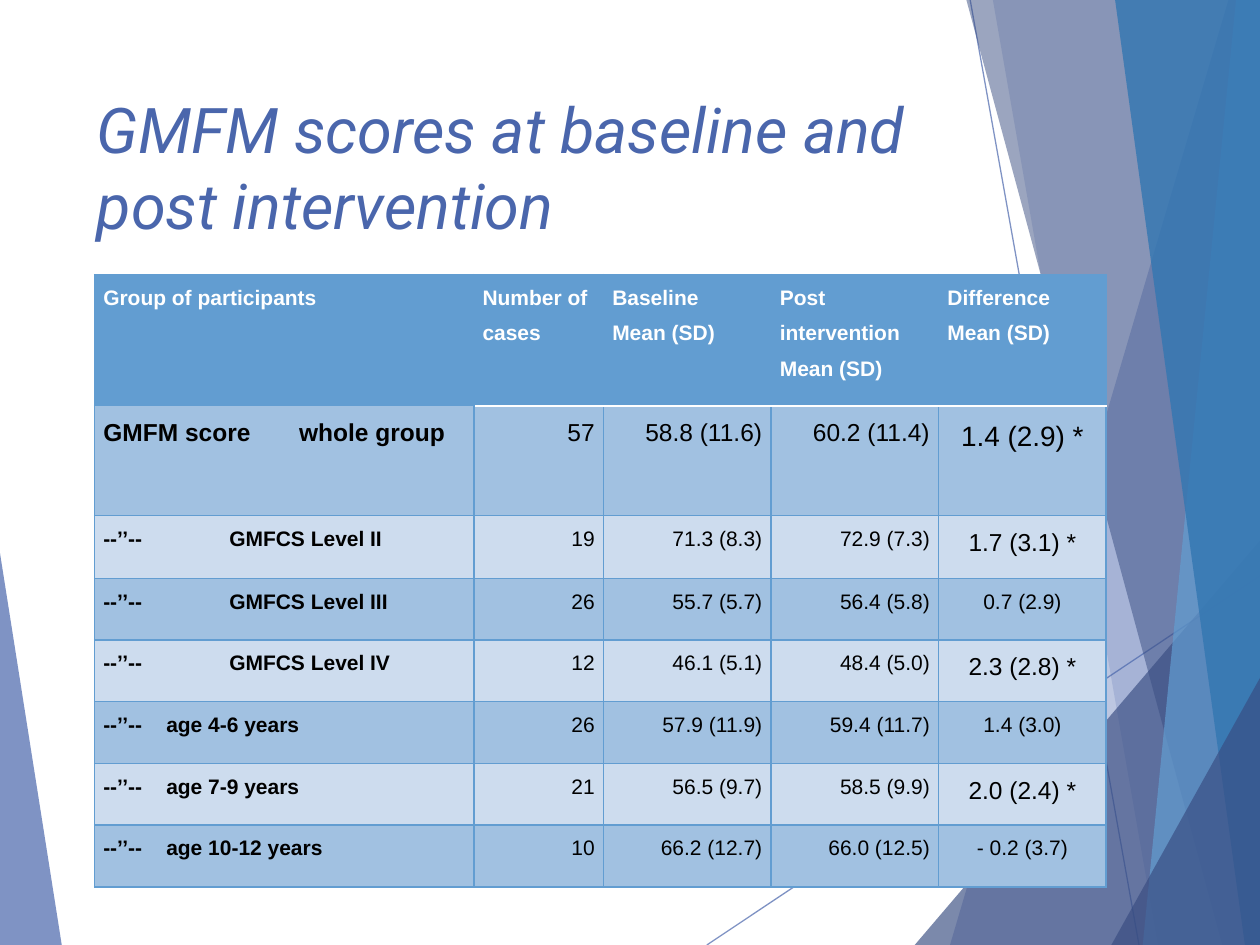
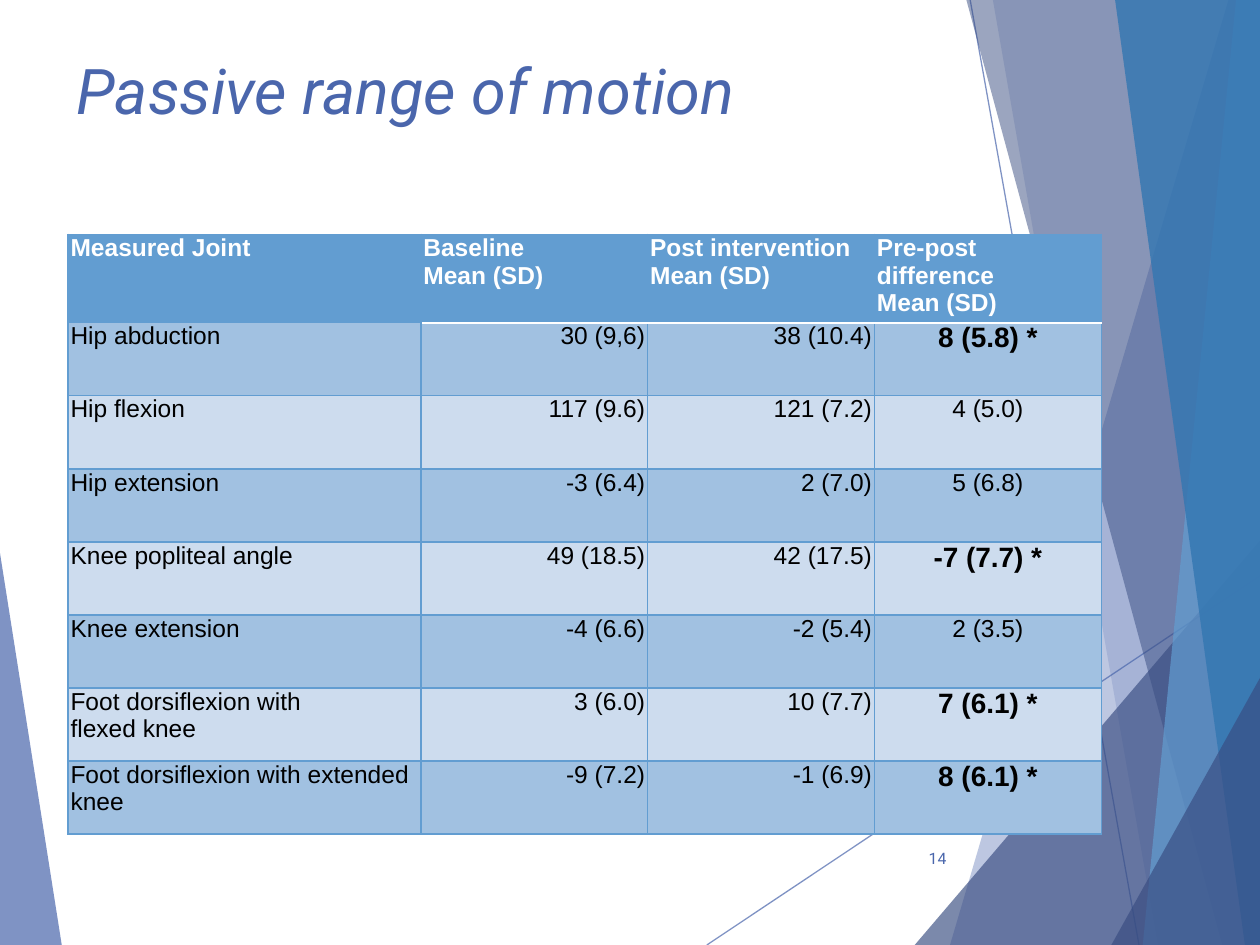
"""Build two result slides on gross motor scores and passive range of motion."""
from dataclasses import dataclass

from lxml import etree
from pptx import Presentation
from pptx import util as u
from pptx.dml.color import RGBColor
from pptx.enum import text
from pptx.enum.shapes import MSO_CONNECTOR
from pptx.oxml.ns import qn

Inches = u.Inches
LEFT, RIGHT, CENTER = text.PP_ALIGN.LEFT, text.PP_ALIGN.RIGHT, text.PP_ALIGN.CENTER


@dataclass(frozen=True)
class Theme:
    accent: str = "4A66AC"
    navy: str = "384C81"
    sky: str = "629DD1"
    ocean: str = "3477B2"
    band_dark: str = "A1C1E1"
    band_light: str = "CDDCEE"
    white: str = "FFFFFF"
    black: str = "000000"
    title_font: str = "Roboto"
    table_font: str = "Arial"
    title_size: int = 36
    number_size: int = 9
    starred_step: int = 2


THEME = Theme()


@dataclass(frozen=True)
class Facet:
    points: tuple[tuple[float, float], ...]
    color: str
    opacity: int


@dataclass(frozen=True)
class Ray:
    start: tuple[float, float]
    end: tuple[float, float]


@dataclass(frozen=True)
class TextStyle:
    font: str
    size: float
    color: str
    bold: bool = False
    italic: bool = False


@dataclass(frozen=True)
class TableDesign:
    left: float
    top: float
    widths: tuple[float, ...]
    heights: tuple[float, ...]
    side_margin: float
    line_spacing: float
    header_size: int
    body_sizes: tuple[int, ...]
    bold_labels: bool
    bold_starred: bool
    rows: tuple[tuple[str, ...], ...]


DECORATION = (
    Facet(((0, 4.39), (0.49, 7.5), (0, 7.5)), THEME.accent, 70),
    Ray((5.61, 7.5), (10, 4.57)),
    Ray((7.7, 0), (9.04, 7.5)),
    Facet(((9.75, 0), (7.54, 7.5), (10, 7.5), (10, 0)), THEME.accent, 36),
    Facet(((7.88, 0), (9.19, 7.5), (10, 7.5), (10, 0)), THEME.accent, 20),
    Facet(((7.26, 7.5), (10, 4.29), (10, 7.5)), THEME.navy, 66),
    Facet(((7.67, 0), (9.7, 7.5), (10, 7.5), (10, 0)), THEME.navy, 50),
    Facet(((9.81, 0), (9.07, 7.5), (10, 7.5), (10, 0)), THEME.sky, 70),
    Facet(((8.85, 0), (9.88, 7.5), (10, 7.5), (10, 0)), THEME.ocean, 82),
    Facet(((8.82, 7.5), (10, 5.38), (10, 7.5)), THEME.navy, 66),
)

GMFM_TABLE = TableDesign(
    left=0.75, top=2.18,
    widths=(3.01, 1.03, 1.33, 1.33, 1.33),
    heights=(1.04, 0.87, 0.5) + (0.49,) * 5,
    side_margin=0.07, line_spacing=1.5,
    header_size=12, body_sizes=(14,) + (12,) * 6,
    bold_labels=True, bold_starred=False,
    rows=(
        ("Group of participants", "Number of cases", "Baseline\nMean (SD)",
         "Post intervention\nMean (SD)", "Difference\nMean (SD)"),
        ("GMFM score\t whole group", "57", "58.8 (11.6)", "60.2 (11.4)", "1.4 (2.9) *"),
        ("--’’--\t\tGMFCS Level II", "19", "71.3 (8.3)", "72.9 (7.3)", "1.7 (3.1) *"),
        ("--’’--\t\tGMFCS Level III", "26", "55.7 (5.7)", "56.4 (5.8)", "0.7 (2.9)"),
        ("--’’--\t\tGMFCS Level IV", "12", "46.1 (5.1)", "48.4 (5.0)", "2.3 (2.8) *"),
        ("--’’--\tage 4-6 years", "26", "57.9 (11.9)", "59.4 (11.7)", "1.4 (3.0)"),
        ("--’’--\tage 7-9 years", "21", "56.5 (9.7)", "58.5 (9.9)", "2.0 (2.4) *"),
        ("--’’--\tage 10-12 years", "10", "66.2 (12.7)", "66.0 (12.5)", "- 0.2 (3.7)"),
    ),
)

MOTION_TABLE = TableDesign(
    left=0.54, top=1.86,
    widths=(2.8,) + (1.8,) * 3,
    heights=(0.66,) + (0.58,) * 7,
    side_margin=0.02, line_spacing=1.0,
    header_size=14, body_sizes=(14,) * 7,
    bold_labels=False, bold_starred=True,
    rows=(
        ("Measured Joint", "Baseline\nMean (SD)", "Post intervention\nMean (SD)",
         "Pre-post difference\nMean (SD)"),
        ("Hip abduction", "30 (9,6)", "38 (10.4)", "8 (5.8) *"),
        ("Hip flexion", "117 (9.6)", "121 (7.2)", "4 (5.0)"),
        ("Hip extension", "-3 (6.4)", "2 (7.0)", "5 (6.8)"),
        ("Knee popliteal angle", "49 (18.5)", "42 (17.5)", "-7 (7.7) *"),
        ("Knee extension", "-4 (6.6)", "-2 (5.4)", "2 (3.5)"),
        ("Foot dorsiflexion with\nflexed knee", "3 (6.0)", "10 (7.7)", "7 (6.1) *"),
        ("Foot dorsiflexion with extended knee", "-9 (7.2)", "-1 (6.9)", "8 (6.1) *"),
    ),
)


def set_opacity(element, percent: int) -> None:
    color = next(element.iter(qn("a:srgbClr")))
    etree.SubElement(color, qn("a:alpha"), val=str(percent * 1000))


def draw_facet(slide, facet: Facet) -> None:
    points = [(Inches(x), Inches(y)) for x, y in facet.points]
    builder = slide.shapes.build_freeform(*points[0])
    builder.add_line_segments(points[1:], close=True)
    shape = builder.convert_to_shape()
    shape.shadow.inherit = False
    shape.fill.solid()
    shape.fill.fore_color.rgb = RGBColor.from_string(facet.color)
    set_opacity(shape.element.spPr, facet.opacity)
    shape.line.fill.background()


def draw_ray(slide, ray: Ray) -> None:
    ends = [Inches(value) for value in ray.start + ray.end]
    connector = slide.shapes.add_connector(MSO_CONNECTOR.STRAIGHT, *ends)
    connector.line.color.rgb = RGBColor.from_string(THEME.accent)
    connector.line.width = u.Pt(0.75)
    properties = connector.element.spPr
    set_opacity(properties, 70)
    etree.SubElement(properties, qn("a:effectLst"))


def draw_decoration(slide) -> None:
    for part in DECORATION:
        if isinstance(part, Facet):
            draw_facet(slide, part)
        else:
            draw_ray(slide, part)


def write(paragraph, content: str, style: TextStyle) -> None:
    for index, line in enumerate(content.split("\n")):
        if index:
            paragraph.add_line_break()
        run = paragraph.add_run()
        run.text = line
        run.font.name = style.font
        run.font.size = u.Pt(style.size)
        run.font.bold = style.bold
        run.font.italic = style.italic
        run.font.color.rgb = RGBColor.from_string(style.color)


def add_text(slide, content: str, box: tuple[float, ...], style: TextStyle,
             alignment=LEFT, anchor=text.MSO_ANCHOR.TOP) -> None:
    frame = slide.shapes.add_textbox(*map(Inches, box)).text_frame
    frame.word_wrap = True
    frame.vertical_anchor = anchor
    frame.paragraphs[0].alignment = alignment
    write(frame.paragraphs[0], content, style)


def add_title(slide, content: str, box: tuple[float, ...]) -> None:
    style = TextStyle(THEME.title_font, THEME.title_size, THEME.accent, italic=True)
    add_text(slide, content, box, style)


def add_slide_number(slide, number: str) -> None:
    style = TextStyle(THEME.title_font, THEME.number_size, THEME.accent)
    add_text(slide, number, (7.05, 6.61, 0.56, 0.4), style, RIGHT, text.MSO_ANCHOR.MIDDLE)


def add_borders(cell, row: int, column: int) -> None:
    properties = cell._tc.get_or_add_tcPr()
    plain, label_edge, header_edge = (THEME.sky, 1), (THEME.sky, 1.5), (THEME.white, 1.5)
    borders = {
        "lnL": label_edge if row and column == 1 else plain,
        "lnR": label_edge if row and column == 0 else plain,
        "lnT": header_edge if row == 1 and column else plain,
        "lnB": header_edge if row == 0 and column else plain,
    }
    for tag, (color, width) in borders.items():
        line = etree.SubElement(properties, qn(f"a:{tag}"), w=str(u.Pt(width)))
        fill = etree.SubElement(line, qn("a:solidFill"))
        etree.SubElement(fill, qn("a:srgbClr"), val=color)


def cell_style(design: TableDesign, row: int, column: int) -> TextStyle:
    if row == 0:
        return TextStyle(THEME.table_font, design.header_size, THEME.white, bold=True)
    size = design.body_sizes[row - 1]
    bold = design.bold_labels and column == 0
    if design.rows[row][column].endswith("*"):
        size += THEME.starred_step
        bold = design.bold_starred
    return TextStyle(THEME.table_font, size, THEME.black, bold=bold)


def fill_cell(cell, design: TableDesign, row: int, column: int) -> None:
    add_borders(cell, row, column)
    band = THEME.band_dark if row % 2 else THEME.band_light
    cell.fill.solid()
    cell.fill.fore_color.rgb = RGBColor.from_string(band if row else THEME.sky)
    cell.margin_left = cell.margin_right = Inches(design.side_margin)
    cell.margin_top = cell.margin_bottom = 0
    paragraph = cell.text_frame.paragraphs[0]
    if row and column:
        paragraph.alignment = CENTER if column == len(design.widths) - 1 else RIGHT
    paragraph.line_spacing = design.line_spacing
    paragraph.space_after = u.Pt(6)
    paragraph._p.get_or_add_pPr().set("defTabSz", str(Inches(0.5)))
    write(paragraph, design.rows[row][column], cell_style(design, row, column))


def add_results_table(slide, design: TableDesign) -> None:
    table = slide.shapes.add_table(
        len(design.heights), len(design.widths), Inches(design.left), Inches(design.top),
        Inches(sum(design.widths)), Inches(sum(design.heights))).table
    for column, width in zip(table.columns, design.widths):
        column.width = Inches(width)
    for row, height in zip(table.rows, design.heights):
        row.height = Inches(height)
    for row in range(len(design.heights)):
        for column in range(len(design.widths)):
            fill_cell(table.cell(row, column), design, row, column)


def add_decorated_slide(presentation):
    slide = presentation.slides.add_slide(presentation.slide_layouts[6])
    draw_decoration(slide)
    return slide


def main() -> None:
    presentation = Presentation()
    presentation.slide_width, presentation.slide_height = Inches(10), Inches(7.5)

    slide = add_decorated_slide(presentation)
    add_title(slide, "GMFM scores at baseline and post intervention", (0.67, 0.67, 6.94, 1.44))
    add_results_table(slide, GMFM_TABLE)

    slide = add_decorated_slide(presentation)
    add_title(slide, "Passive range of motion", (0.51, 0.36, 8.19, 1.02))
    add_results_table(slide, MOTION_TABLE)
    add_slide_number(slide, "14")

    presentation.save("out.pptx")


if __name__ == "__main__":
    main()
